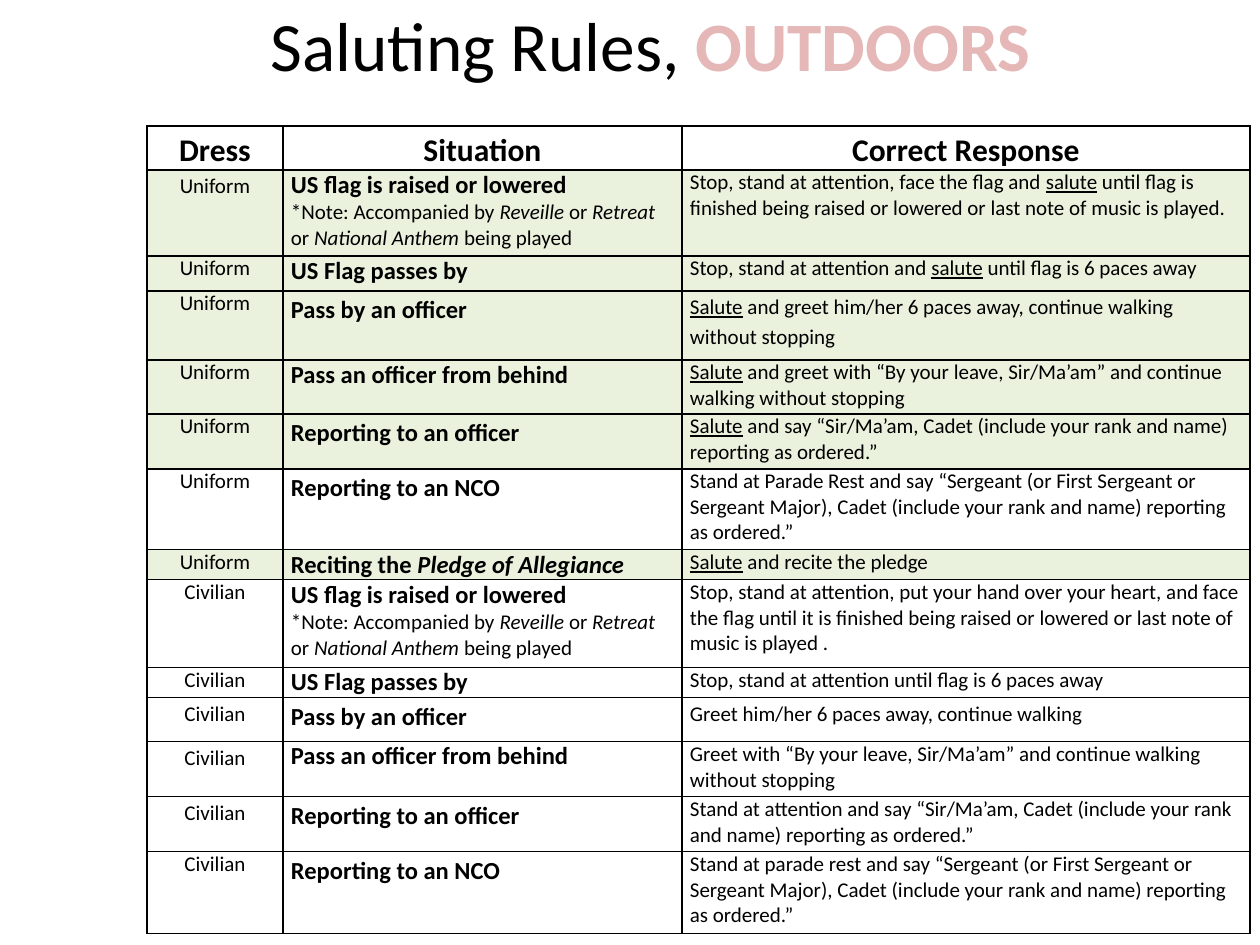
from dataclasses import dataclass

import pptx
import pptx.dml.color
import pptx.enum.text
import pptx.oxml
import pptx.oxml.ns
import pptx.util

EMU_PER_PX = 914400 / 126
FONT = "Calibri"
BLACK = pptx.dml.color.RGBColor(0x00, 0x00, 0x00)
PINK = pptx.dml.color.RGBColor(0xE5, 0xB8, 0xB7)
GREEN = pptx.dml.color.RGBColor(0xEA, 0xF1, 0xDD)
CENTER = pptx.enum.text.PP_ALIGN.CENTER
LEFT = pptx.enum.text.PP_ALIGN.LEFT
LOOSE = 1.15

COLUMN_WIDTHS = (136, 399, 568)
HEADINGS = ("Dress", "Situation", "Correct Response")
HEADING_HEIGHT = 44
MUSIC_NOTE = "*Note: Accompanied by ~Reveille~ or ~Retreat~ or ~National Anthem~ being played"


@dataclass(frozen=True)
class Rule:
    """One table row; ~text~ is italic and _text_ is underlined."""
    height: int
    dress: str
    situation: str
    response: str
    note: str = ""
    salute: bool = False
    spacing: tuple[float, float, float] = (1, 1, 1)


RULES = (
    Rule(86, "Uniform", "US flag is raised or lowered",
         "Stop, stand at attention, face the flag and _salute_ until flag is finished "
         "being raised or lowered or last note of music is played.",
         note=MUSIC_NOTE, salute=True, spacing=(LOOSE, 1, 1)),
    Rule(35, "Uniform", "US Flag passes by",
         "Stop, stand at attention and _salute_ until flag is 6 paces away", salute=True),
    Rule(69, "Uniform", "Pass by an officer",
         "_Salute_ and greet him/her 6 paces away, continue walking without stopping",
         salute=True, spacing=(1, LOOSE, LOOSE)),
    Rule(54, "Uniform", "Pass an officer from behind",
         "_Salute_ and greet with “By your leave, Sir/Ma’am” and continue walking "
         "without stopping", salute=True),
    Rule(55, "Uniform", "Reporting to an officer",
         "_Salute_ and say “Sir/Ma’am, Cadet (include your rank and name) reporting "
         "as ordered.”", salute=True, spacing=(1, LOOSE, 1)),
    Rule(81, "Uniform", "Reporting to an NCO",
         "Stand at Parade Rest and say “Sergeant (or First Sergeant or Sergeant Major), "
         "Cadet (include your rank and name) reporting as ordered.”",
         spacing=(1, LOOSE, 1)),
    Rule(30, "Uniform", "Reciting the ~Pledge of Allegiance~",
         "_Salute_ and recite the pledge", salute=True),
    Rule(88, "Civilian", "US flag is raised or lowered",
         "Stop, stand at attention, put your hand over your heart, and face the flag until "
         "it is finished being raised or lowered or last note of music is played .",
         note=MUSIC_NOTE),
    Rule(30, "Civilian", "US Flag passes by",
         "Stop, stand at attention until flag is 6 paces away"),
    Rule(44, "Civilian", "Pass by an officer",
         "Greet him/her 6 paces away, continue walking", spacing=(LOOSE, LOOSE, LOOSE)),
    Rule(55, "Civilian", "Pass an officer from behind",
         "Greet with “By your leave, Sir/Ma’am” and continue walking without stopping",
         spacing=(LOOSE, 1, 1)),
    Rule(55, "Civilian", "Reporting to an officer",
         "Stand at attention and say “Sir/Ma’am, Cadet (include your rank and name) "
         "reporting as ordered.”", spacing=(LOOSE, LOOSE, 1)),
    Rule(82, "Civilian", "Reporting to an NCO",
         "Stand at parade rest and say “Sergeant (or First Sergeant or Sergeant Major), "
         "Cadet (include your rank and name) reporting as ordered.”",
         spacing=(1, LOOSE, 1)),
)


def px(length: int) -> pptx.util.Emu:
    return pptx.util.Emu(round(length * EMU_PER_PX))


def write(para, text: str, size: float, bold: bool = False,
          align=LEFT, spacing: float = 1) -> None:
    """Fill a paragraph, turning ~ and _ marks into italic and underlined runs."""
    para.alignment = align
    para.line_spacing = spacing
    para.font.name = FONT
    para.font.size = pptx.util.Pt(size)
    para.font.bold = bold
    para.font.color.rgb = BLACK
    for i, slanted in enumerate(text.split("~")):
        for j, words in enumerate(slanted.split("_")):
            if words:
                span = para.add_run()
                span.text = words
                if i % 2:
                    span.font.italic = True
                if j % 2:
                    span.font.underline = True


def style_cell(cell, green: bool) -> None:
    cell.margin_left = cell.margin_right = px(8)
    cell.margin_top = cell.margin_bottom = 0
    properties = cell._tc.get_or_add_tcPr()
    for side in ("lnL", "lnR", "lnT", "lnB"):
        properties.append(pptx.oxml.parse_xml(
            f'<a:{side} {pptx.oxml.ns.nsdecls("a")} w="12700"><a:solidFill>'
            f'<a:srgbClr val="{BLACK}"/></a:solidFill></a:{side}>'))
    if green:
        cell.fill.solid()
        cell.fill.fore_color.rgb = GREEN
    else:
        cell.fill.background()


def add_title(page) -> None:
    box = page.shapes.add_textbox(px(136), px(10), px(1029), px(67))
    frame = box.text_frame
    frame.word_wrap = True
    frame.vertical_anchor = pptx.enum.text.MSO_ANCHOR.MIDDLE
    para = frame.paragraphs[0]
    write(para, "Saluting Rules, ", 39.6, align=CENTER)
    span = para.add_run()
    span.text = "OUTDOORS"
    span.font.bold = True
    span.font.color.rgb = PINK


def add_rules_table(page) -> None:
    heights = [HEADING_HEIGHT] + [rule.height for rule in RULES]
    table = page.shapes.add_table(len(heights), len(COLUMN_WIDTHS), px(147), px(126),
                                  px(sum(COLUMN_WIDTHS)), px(sum(heights))).table
    table.first_row = table.horz_banding = False
    for column, width in zip(table.columns, COLUMN_WIDTHS):
        column.width = px(width)
    for row, height in zip(table.rows, heights):
        row.height = px(height)

    for cell, heading in zip(table.rows[0].cells, HEADINGS):
        style_cell(cell, green=False)
        write(cell.text_frame.paragraphs[0], heading, 18, True, CENTER, LOOSE)

    for number, rule in enumerate(RULES, start=1):
        cells = [table.cell(number, column) for column in range(len(COLUMN_WIDTHS))]
        for cell in cells:
            style_cell(cell, rule.salute)
        dress, situation, response = (cell.text_frame for cell in cells)
        write(dress.paragraphs[0], rule.dress, 12, align=CENTER, spacing=rule.spacing[0])
        write(situation.paragraphs[0], rule.situation, 14, True, spacing=rule.spacing[1])
        if rule.note:
            write(situation.add_paragraph(), rule.note, 12)
        write(response.paragraphs[0], rule.response, 12, spacing=rule.spacing[2])


def main() -> None:
    deck = pptx.Presentation()
    deck.slide_width = pptx.util.Inches(10)
    deck.slide_height = pptx.util.Inches(7.5)
    page = deck.slides.add_slide(deck.slide_layouts[6])
    add_title(page)
    add_rules_table(page)
    deck.save("out.pptx")


if __name__ == "__main__":
    main()
